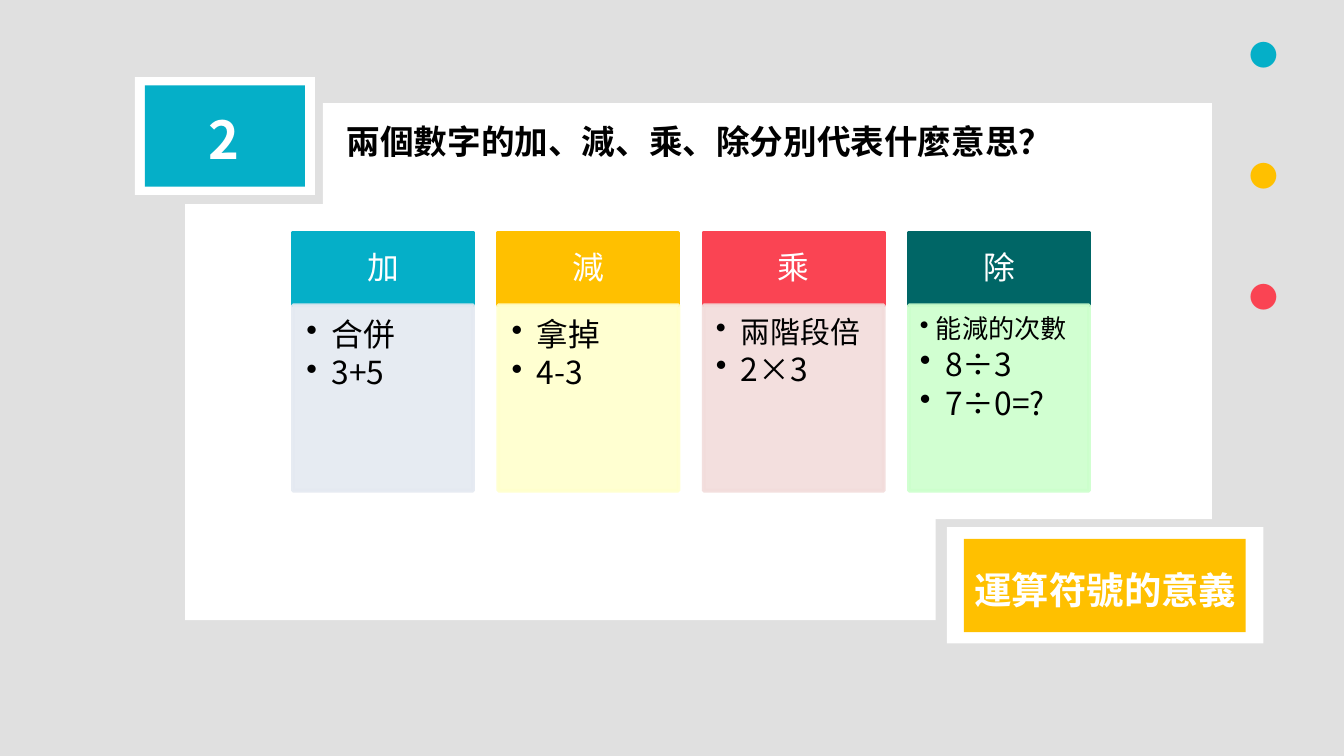
from dataclasses import dataclass

from lxml import etree
from pptx import Presentation
from pptx.dml import color
from pptx.enum import shapes, text
from pptx.oxml import ns
from pptx.util import Pt

FONT = "Noto Sans CJK SC"
COLORS = {
    "background": "E0E0E0", "white": "FFFFFF", "black": "000000",
    "teal": "05AFC8", "amber": "FFC000", "red": "FA4453", "green": "006666",
    "pale_blue": "E4E9F1", "pale_yellow": "FFFFCC",
    "pale_red": "F2DCDB", "pale_green": "CCFFCC",
}
CARD_LEFT, CARD_TOP, CARD_PITCH, CARD_WIDTH = 157, 124.6, 110, 96.5
HEADER_HEIGHT, BODY_HEIGHT = 38.9, 99.4


@dataclass(frozen=True)
class Box:
    left: float
    top: float
    width: float
    height: float


@dataclass(frozen=True)
class Panel:
    box: Box
    fill: str


@dataclass(frozen=True)
class Label:
    box: Box
    content: str
    size: float
    color: str
    align: text.PP_ALIGN


@dataclass(frozen=True)
class Bullet:
    content: str
    size: float = 17
    indent: float = 13.5


@dataclass(frozen=True)
class Card:
    title: str
    fill: str
    tint: str
    insets: tuple[float, float, float, float]
    bullets: tuple[Bullet, ...]


PANELS = [
    Panel(Box(72.3, 41.3, 96.4, 63.1), "white"),
    Panel(Box(77.6, 45.8, 85.7, 54.2), "teal"),
    Panel(Box(507.2, 282.4, 169.6, 62.3), "white"),
    Panel(Box(516.4, 288.7, 151, 50), "amber"),
    Panel(Box(99.2, 109.3, 550, 168.8), "white"),
    Panel(Box(173, 55.2, 476.2, 54.1), "white"),
    Panel(Box(99.2, 278.1, 402.1, 54.1), "white"),
]
LABELS = [
    Label(Box(513.4, 300.2, 157.7, 31.7), "運算符號的意義", 20, "white", text.PP_ALIGN.CENTER),
    Label(Box(82, 54, 76.3, 41), "2", 28, "white", text.PP_ALIGN.CENTER),
    Label(Box(178.6, 61.2, 447.8, 28.8), "兩個數字的加、減、乘、除分別代表什麼意思？",
          18, "black", text.PP_ALIGN.LEFT),
]
WIDE = (7.2, 7.2, 9.4, 10.8)
CARDS = [
    Card("加", "teal", "pale_blue", WIDE, (Bullet("合併"), Bullet("3+5"))),
    Card("減", "amber", "pale_yellow", WIDE, (Bullet("拿掉"), Bullet("4-3"))),
    Card("乘", "red", "pale_red", (6.5, 6.5, 8.6, 10.1),
         (Bullet("兩階段倍", 16), Bullet("2×3"))),
    Card("除", "green", "pale_green", (5.8, 5.8, 7.9, 8.6),
         (Bullet("能減的次數", 14, 8.6), Bullet("8÷3"), Bullet("7÷0=?"))),
]


def rgb(name: str) -> color.RGBColor:
    return color.RGBColor.from_string(COLORS[name])


def place(box: Box) -> tuple[Pt, Pt, Pt, Pt]:
    return Pt(box.left), Pt(box.top), Pt(box.width), Pt(box.height)


def format_run(run, size: float, name: str, bold: bool = False) -> None:
    run.font.size = Pt(size)
    run.font.name = FONT
    run.font.bold = bold
    run.font.color.rgb = rgb(name)
    east_asian = etree.SubElement(run.font._element, ns.qn("a:ea"))
    east_asian.set("typeface", FONT)


def set_insets(frame, insets: tuple[float, float, float, float]) -> None:
    frame.margin_left, frame.margin_top, frame.margin_right, frame.margin_bottom = map(Pt, insets)


def add_rectangle(slide, box: Box, fill: str):
    shape = slide.shapes.add_shape(shapes.MSO_SHAPE.RECTANGLE, *place(box))
    shape.shadow.inherit = False
    shape.fill.solid()
    shape.fill.fore_color.rgb = rgb(fill)
    shape.line.fill.background()
    return shape


def add_outline(shape, fill: str) -> None:
    shape.line.color.rgb = rgb(fill)
    shape.line.width = Pt(2)


def set_opacity(shape, percent: int) -> None:
    for element in shape._element.spPr.iter(ns.qn("a:srgbClr")):
        etree.SubElement(element, ns.qn("a:alpha")).set("val", str(percent * 1000))


def add_text_box(slide, box: Box):
    frame = slide.shapes.add_textbox(*place(box)).text_frame
    frame.word_wrap = True
    return frame


def add_label(slide, label: Label) -> None:
    frame = add_text_box(slide, label.box)
    frame.text = label.content
    paragraph = frame.paragraphs[0]
    paragraph.alignment = label.align
    format_run(paragraph.runs[0], label.size, label.color, True)


def add_dots(slide) -> None:
    frame = add_text_box(slide, Box(592.6, -7.2, 118.8, 72.7))
    paragraph = frame.paragraphs[0]
    paragraph.alignment = text.PP_ALIGN.RIGHT
    for content, name in (("· ", "teal"), ("· ", "amber"), ("·", "red")):
        run = paragraph.add_run()
        run.text = content
        format_run(run, 54, name, True)


def add_bullet(paragraph, bullet: Bullet) -> None:
    paragraph.text = bullet.content
    paragraph.level = 1
    paragraph.alignment = text.PP_ALIGN.LEFT
    paragraph.line_spacing = 0.9
    paragraph.space_after = Pt(2.5)
    properties = paragraph._p.get_or_add_pPr()
    properties.set("marL", str(Pt(bullet.indent)))
    properties.set("indent", str(-Pt(bullet.indent)))
    etree.SubElement(properties, ns.qn("a:buChar")).set("char", "•")
    format_run(paragraph.runs[0], bullet.size, "black")


def add_card(slide, card: Card, left: float) -> None:
    header = add_rectangle(slide, Box(left, CARD_TOP, CARD_WIDTH, HEADER_HEIGHT), card.fill)
    add_outline(header, card.fill)
    header.text_frame.text = card.title
    header.text_frame.vertical_anchor = text.MSO_ANCHOR.MIDDLE
    paragraph = header.text_frame.paragraphs[0]
    paragraph.alignment = text.PP_ALIGN.CENTER
    paragraph.line_spacing = 0.9
    format_run(paragraph.runs[0], 17, "white")

    body = add_rectangle(
        slide, Box(left, CARD_TOP + HEADER_HEIGHT, CARD_WIDTH, BODY_HEIGHT), card.tint)
    add_outline(body, card.tint)
    set_opacity(body, 90)
    frame = body.text_frame
    frame.word_wrap = True
    frame.vertical_anchor = text.MSO_ANCHOR.TOP
    set_insets(frame, card.insets)
    for index, bullet in enumerate(card.bullets):
        add_bullet(frame.add_paragraph() if index else frame.paragraphs[0], bullet)


def main() -> None:
    presentation = Presentation()
    presentation.slide_width, presentation.slide_height = Pt(720), Pt(405)
    slide = presentation.slides.add_slide(presentation.slide_layouts[6])
    slide.background.fill.solid()
    slide.background.fill.fore_color.rgb = rgb("background")
    add_dots(slide)
    for panel in PANELS:
        add_rectangle(slide, panel.box, panel.fill)
    for label in LABELS:
        add_label(slide, label)
    for index, card in enumerate(CARDS):
        add_card(slide, card, CARD_LEFT + index * CARD_PITCH)
    presentation.save("out.pptx")


if __name__ == "__main__":
    main()
